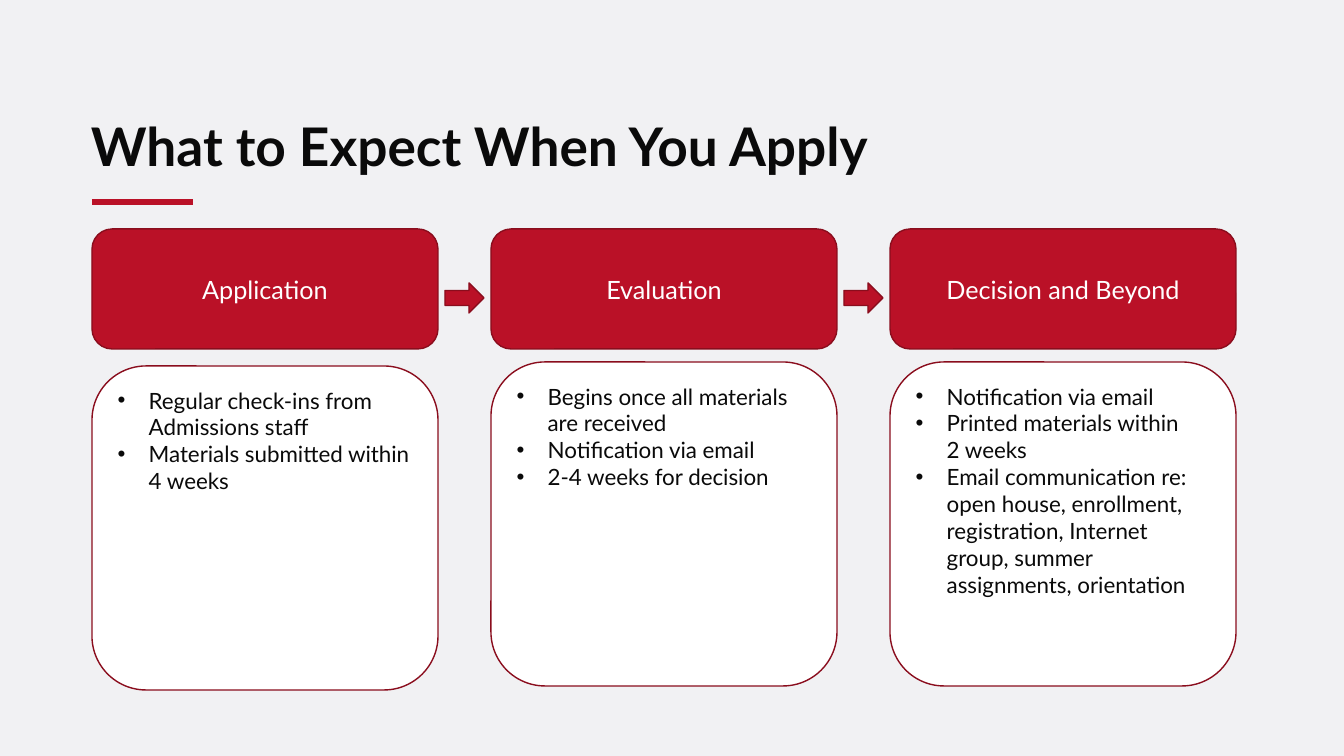
from dataclasses import dataclass

from lxml.etree import SubElement
from pptx import Presentation
from pptx.dml.color import RGBColor
from pptx.enum.shapes import MSO_CONNECTOR as Connector, MSO_SHAPE as Shape
from pptx.enum.text import MSO_ANCHOR as Anchor, PP_ALIGN as Align
from pptx.oxml.ns import qn
from pptx.util import Emu, Pt

EMU_PER_PX = 914400 / 100.8


@dataclass(frozen=True)
class Theme:
    font: str = "Lato"
    background: str = "F1F1F3"
    accent: str = "BA1127"
    outline: str = "8A0D1D"
    card: str = "FFFFFF"
    ink: str = "0A0A0A"
    light: str = "FFFFFF"
    title_size: int = 38
    header_size: int = 18
    body_size: int = 16


THEME = Theme()

# Columns: left edge of the first, distance between them, shared sizes
FIRST_LEFT, PITCH, COLUMN_WIDTH = 92, 399, 346
HEADER_TOP, HEADER_HEIGHT = 229, 120
CARD_HEIGHT = 324
ARROW_TOP, ARROW_WIDTH, ARROW_HEIGHT = 283, 39, 30
BULLET_INDENT = 31

# Stage name, top of its card, points on the card
STAGES = [
    ("Application", 366, [
        "Regular check-ins from Admissions staff",
        "Materials submitted within 4 weeks",
    ]),
    ("Evaluation", 362, [
        "Begins once all materials are received",
        "Notification via email",
        "2-4 weeks for decision",
    ]),
    ("Decision and Beyond", 362, [
        "Notification via email",
        "Printed materials within\v2 weeks",
        "Email communication re: open house, enrollment, registration, "
        "Internet group, summer assignments, orientation",
    ]),
]


def px(length):
    return Emu(round(length * EMU_PER_PX))


def color(code):
    return RGBColor.from_string(code)


def add_bullet(paragraph):
    properties = paragraph._p.get_or_add_pPr()
    properties.set("marL", str(px(BULLET_INDENT)))
    properties.set("indent", str(-px(BULLET_INDENT)))
    SubElement(properties, qn("a:buFont")).set("typeface", "Arial")
    SubElement(properties, qn("a:buChar")).set("char", "•")


def write_text(holder, lines, *, size, ink, bold=False, align=Align.LEFT,
               anchor=Anchor.TOP, spacing=None, bullets=False):
    frame = holder.text_frame
    frame.word_wrap = True
    frame.vertical_anchor = anchor
    for number, line in enumerate(lines):
        paragraph = frame.add_paragraph() if number else frame.paragraphs[0]
        paragraph.text = line
        paragraph.alignment = align
        if spacing:
            paragraph.line_spacing = spacing
        if bullets:
            add_bullet(paragraph)
        for run in paragraph.runs:
            run.font.name = THEME.font
            run.font.size = Pt(size)
            run.font.bold = bold
            run.font.color.rgb = color(ink)


def add_block(slide, kind, left, top, width, height, fill):
    block = slide.shapes.add_shape(kind, px(left), px(top), px(width), px(height))
    block.shadow.inherit = False
    block.fill.solid()
    block.fill.fore_color.rgb = color(fill)
    block.line.color.rgb = color(THEME.outline)
    block.line.width = Pt(1)
    return block


def add_title(slide, title):
    heading = slide.shapes.add_textbox(px(81), px(54), px(1071), px(129))
    write_text(heading, [title], size=THEME.title_size, ink=THEME.ink,
               bold=True, anchor=Anchor.BOTTOM, spacing=0.9)


def add_rule(slide, left, right, y):
    rule = slide.shapes.add_connector(Connector.STRAIGHT, px(left), px(y), px(right), px(y))
    rule.line.color.rgb = color(THEME.accent)
    rule.line.width = Pt(4)
    SubElement(rule._element.spPr, qn("a:effectLst"))


def add_stage(slide, left, name, card_top, points):
    header = add_block(slide, Shape.ROUNDED_RECTANGLE, left, HEADER_TOP,
                       COLUMN_WIDTH, HEADER_HEIGHT, THEME.accent)
    write_text(header, [name], size=THEME.header_size, ink=THEME.light,
               align=Align.CENTER, anchor=Anchor.MIDDLE)
    card = add_block(slide, Shape.ROUNDED_RECTANGLE, left, card_top,
                     COLUMN_WIDTH, CARD_HEIGHT, THEME.card)
    write_text(card, points, size=THEME.body_size, ink=THEME.ink, bullets=True)


def add_stage_arrow(slide, next_left):
    gap = PITCH - COLUMN_WIDTH
    left = next_left - (gap + ARROW_WIDTH) // 2
    add_block(slide, Shape.RIGHT_ARROW, left, ARROW_TOP,
              ARROW_WIDTH, ARROW_HEIGHT, THEME.accent)


def main():
    deck = Presentation()
    deck.slide_width, deck.slide_height = px(1344), px(756)
    slide = deck.slides.add_slide(deck.slide_layouts[6])
    slide.background.fill.solid()
    slide.background.fill.fore_color.rgb = color(THEME.background)

    # Heading
    add_rule(slide, left=92, right=193, y=202)
    add_title(slide, "What to Expect When You Apply")

    # Stages, with an arrow leading into each one after the first
    for position, (name, card_top, points) in enumerate(STAGES):
        left = FIRST_LEFT + position * PITCH
        add_stage(slide, left, name, card_top, points)
        if position:
            add_stage_arrow(slide, left)

    deck.save("out.pptx")


if __name__ == "__main__":
    main()
